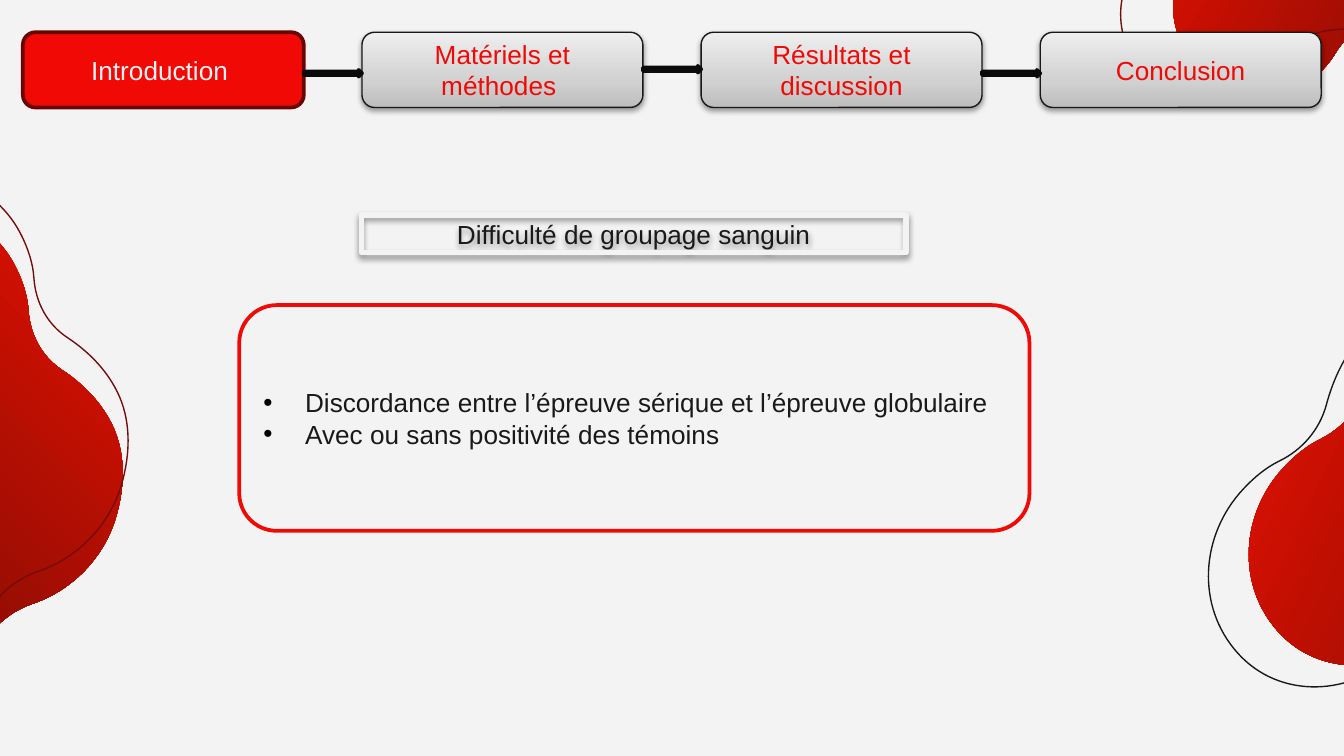
"""Build the introduction slide on difficult blood grouping."""

import dataclasses
import math
import typing

import pptx
import pptx.dml.color
import pptx.enum.shapes
import pptx.enum.text
import pptx.oxml
import pptx.oxml.ns
import pptx.util
from lxml import etree

COLORS = {
    "paper": "F3F3F3",
    "ink": "191919",
    "red": "F10906",
    "dark red": "6A0403",
    "wine": "750C0C",
    "black": "000000",
    "arrow edge": "0B0B0B",
    "step edge": "181818",
}
RED_STOPS = ((0, "E91101"), (100, "630B05"))
GREY_STOPS = ((0, "BDBDBD"), (35, "D1D1D1"), (100, "EEEEEE"))
GRID_COLUMNS = 10
MARGIN = 0.17
STEP_ROW, STEP_COLUMNS, STEP_ROWS = 0.24, 2.09, 0.56
STEP_PITCH = (GRID_COLUMNS - 2 * MARGIN - STEP_COLUMNS) / 3
ARROW_ROWS = (0.52, 0.49, 0.52)
NAMESPACE = pptx.oxml.ns.nsdecls("a")
SHAPES = pptx.enum.shapes.MSO_SHAPE
ALIGN = pptx.enum.text.PP_ALIGN

deck = pptx.Presentation()
deck.slide_width = pptx.util.Inches(10)
deck.slide_height = deck.slide_width * 9 // 16
CELL = deck.slide_width // GRID_COLUMNS
slide = deck.slides.add_slide(deck.slide_layouts[6])


class Area(typing.NamedTuple):
    column: float
    row: float
    columns: float
    rows: float


class Knot(typing.NamedTuple):
    x: float
    y: float
    heading: float


class Blob(typing.NamedTuple):
    origin: tuple[float, float]
    across: tuple[float, float]
    down: tuple[float, float]
    shift: tuple[float, float]
    angle: float
    edge: str


@dataclasses.dataclass(frozen=True)
class Card:
    area: Area
    kind: int
    lines: tuple[str, ...] = ()
    text_color: str = "ink"
    fill: str | None = None
    stops: tuple[tuple[int, str], ...] = ()
    edge: str = "paper"
    edge_width: float = 2
    shadow: bool = False
    bullets: bool = False


KNOTS = (
    Knot(0.31, -1.43, 154), Knot(0.04, -1.22, 133), Knot(0, 0, 48), Knot(1.19, -0.01, -45),
    Knot(1.37, -0.27, -63), Knot(1.78, -0.62, -15), Knot(2.64, -0.59, 23), Knot(2.96, -0.54, -6),
    Knot(3.66, -1.31, -87), Knot(2.95, -2.06, 176), Knot(2.39, -2.32, 234), Knot(1.6, -2.68, 175),
    Knot(0.93, -2.37, 132), Knot(0.66, -1.85, 105),
)
BLOBS = (
    Blob((8.88, 0.46), (0.77, 0.09), (-0.03, 0.73), (-0.39, 0.06), 30, "wine"),
    Blob((9.51, 4.7), (1, 0), (0, 1), (-0.3, 0.16), 25.5, "ink"),
    Blob((-0.96, 1.62), (-0.37, 0.93), (-0.9, -0.28), (0.04, -0.24), 135, "wine"),
)


def rgb(name: str) -> pptx.dml.color.RGBColor:
    return pptx.dml.color.RGBColor.from_string(COLORS[name])


def set_line(shape, color: str, width: float) -> None:
    shape.line.color.rgb = rgb(color)
    shape.line.width = pptx.util.Pt(width)


def set_gradient(shape, stops: tuple[tuple[int, str], ...], angle: float) -> None:
    shape.fill.solid()
    marks = "".join(
        f'<a:gs pos="{share * 1000}"><a:srgbClr val="{color}"/></a:gs>' for share, color in stops
    )
    gradient = pptx.oxml.parse_xml(
        f"<a:gradFill {NAMESPACE}><a:gsLst>{marks}</a:gsLst>"
        f'<a:lin ang="{round(angle * 60000)}" scaled="0"/></a:gradFill>'
    )
    properties = shape._element.spPr
    properties.replace(properties.find(pptx.oxml.ns.qn("a:solidFill")), gradient)


def add_shadow(shape) -> None:
    effects = shape._element.spPr.find(pptx.oxml.ns.qn("a:effectLst"))
    effects.append(pptx.oxml.parse_xml(
        f'<a:outerShdw {NAMESPACE} blurRad="{pptx.util.Pt(3.1)}" dist="{pptx.util.Pt(1.6)}" '
        f'dir="5400000" rotWithShape="0"><a:srgbClr val="{COLORS["black"]}">'
        '<a:alpha val="38000"/></a:srgbClr></a:outerShdw>'
    ))


def curve_points() -> list[tuple[float, float]]:
    points = [KNOTS[0][:2]]
    for start, end in zip(KNOTS, KNOTS[1:] + KNOTS[:1]):
        turn = math.radians((end.heading - start.heading + 180) % 360 - 180)
        reach = math.dist(start[:2], end[:2]) * 2 / 3 / (1 + math.cos(turn / 2))
        for knot, length in ((start, reach), (end, -reach), (end, 0)):
            heading = math.radians(knot.heading)
            points.append((knot.x + length * math.cos(heading), knot.y + length * math.sin(heading)))
    return points


def add_outline(blob: Blob, shift: tuple[float, float]):
    corners = [
        tuple(round((blob.origin[axis] + shift[axis] + x * blob.across[axis] + y * blob.down[axis]) * CELL)
              for axis in (0, 1))
        for x, y in curve_points()
    ]
    builder = slide.shapes.build_freeform(*corners[0])
    builder.add_line_segments(corners[1:], close=True)
    shape = builder.convert_to_shape()
    shape.shadow.inherit = False
    segments = list(shape._element.iter(pptx.oxml.ns.qn("a:lnTo")))
    for first in range(0, len(segments) - 2, 3):
        curve = etree.Element(pptx.oxml.ns.qn("a:cubicBezTo"))
        segments[first].addprevious(curve)
        for segment in segments[first:first + 3]:
            curve.append(segment[0])
            segment.getparent().remove(segment)
    return shape


def add_blob(blob: Blob) -> None:
    body = add_outline(blob, (0, 0))
    set_gradient(body, RED_STOPS, blob.angle)
    body.line.fill.background()
    contour = add_outline(blob, blob.shift)
    contour.fill.background()
    set_line(contour, blob.edge, 0.75)


def add_bullet(para) -> None:
    properties = para._p.get_or_add_pPr()
    indent = pptx.util.Inches(0.31)
    properties.set("marL", str(indent))
    properties.set("indent", str(-indent))
    for mark in (
        f'<a:buClr {NAMESPACE}><a:srgbClr val="{COLORS["black"]}"/></a:buClr>',
        f'<a:buFont {NAMESPACE} typeface="Arial"/>',
        f'<a:buChar {NAMESPACE} char="•"/>',
    ):
        properties.append(pptx.oxml.parse_xml(mark))


def add_card(card: Card) -> None:
    box = slide.shapes.add_shape(card.kind, *(round(length * CELL) for length in card.area))
    box.shadow.inherit = False
    if card.stops:
        set_gradient(box, card.stops, 270)
    elif card.fill:
        box.fill.solid()
        box.fill.fore_color.rgb = rgb(card.fill)
    else:
        box.fill.background()
    set_line(box, card.edge, card.edge_width)
    if card.shadow:
        add_shadow(box)
    frame = box.text_frame
    frame.word_wrap = True
    frame.vertical_anchor = pptx.enum.text.MSO_ANCHOR.MIDDLE
    for index, line in enumerate(card.lines):
        para = frame.add_paragraph() if index else frame.paragraphs[0]
        para.alignment = ALIGN.LEFT if card.bullets else ALIGN.CENTER
        if card.bullets:
            add_bullet(para)
        span = para.add_run()
        span.text = line
        span.font.name = "Arial"
        span.font.size = pptx.util.Pt(14)
        span.font.color.rgb = rgb(card.text_color)


def step_card(index: int, label: str) -> Card:
    area = Area(MARGIN + index * STEP_PITCH, STEP_ROW, STEP_COLUMNS, STEP_ROWS)
    if index == 0:
        return Card(area, SHAPES.ROUNDED_RECTANGLE, (label,), "paper", "red", edge="dark red")
    return Card(area, SHAPES.ROUNDED_RECTANGLE, (label,), "red", stops=GREY_STOPS,
                edge="step edge", edge_width=0.75, shadow=True)


def arrow_card(index: int, row: float) -> Card:
    column = MARGIN + index * STEP_PITCH + STEP_COLUMNS
    return Card(Area(column, row, STEP_PITCH - STEP_COLUMNS, 0.05), SHAPES.RIGHT_ARROW,
                fill="ink", edge="arrow edge")


STEPS = ("Introduction ", "Matériels et méthodes ", "Résultats et discussion", "Conclusion")
CARDS = (
    Card(Area(2.69, 1.6, 4.05, 0.28), SHAPES.RECTANGLE, ("Difficulté de groupage sanguin",),
         edge_width=3, shadow=True),
    Card(Area(1.78, 2.27, 5.88, 1.68), SHAPES.ROUNDED_RECTANGLE,
         ("Discordance entre l’épreuve sérique et l’épreuve globulaire",
          "Avec ou sans positivité des témoins"),
         fill="paper", edge="red", bullets=True),
    *(step_card(index, label) for index, label in enumerate(STEPS)),
    *(arrow_card(index, row) for index, row in enumerate(ARROW_ROWS)),
)

slide.background.fill.solid()
slide.background.fill.fore_color.rgb = rgb("paper")
for blob in BLOBS:
    add_blob(blob)
for card in CARDS:
    add_card(card)
deck.save("out.pptx")
